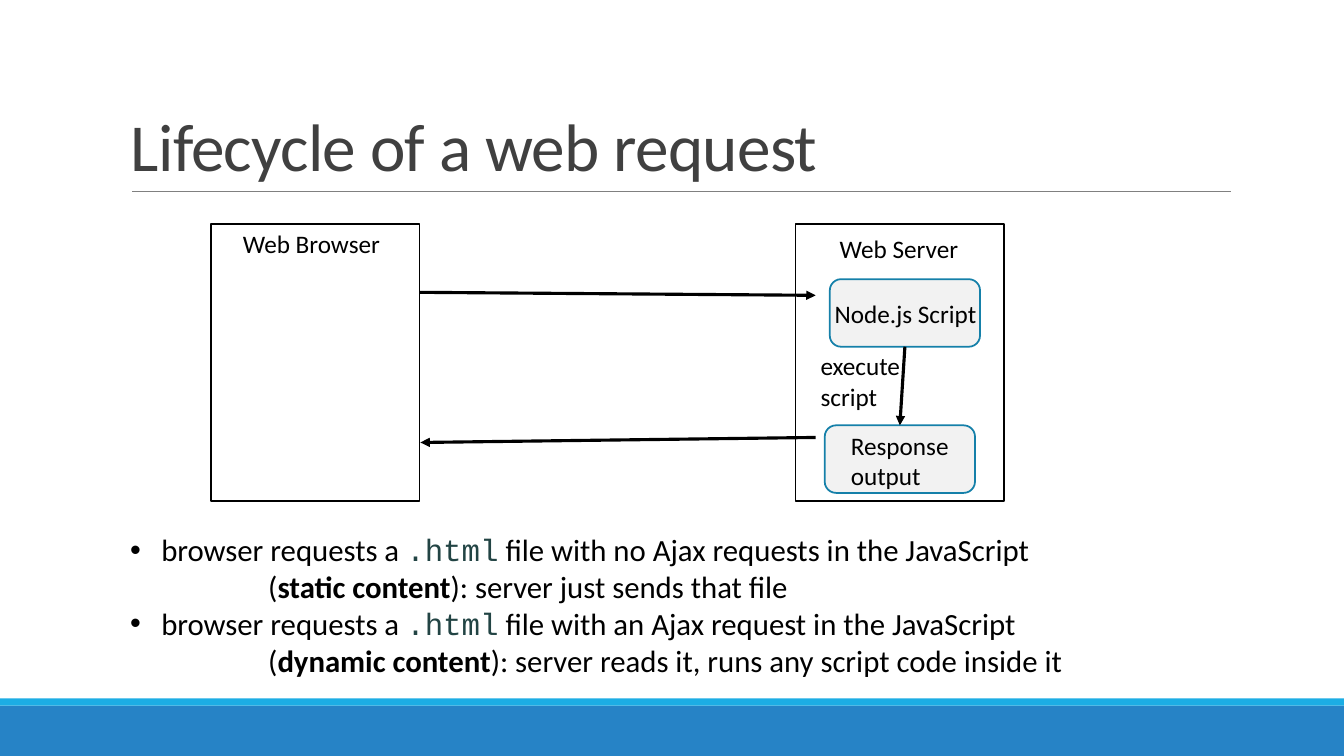
from pptx import Presentation
from pptx.dml.color import RGBColor
from pptx.enum.shapes import MSO_CONNECTOR as Link, MSO_SHAPE as Kind
from pptx.enum.text import MSO_ANCHOR as Anchor
from pptx.oxml.ns import qn
from pptx.util import Inches, Pt
from lxml.etree import SubElement as Sub

# Content
TITLE = "Lifecycle of a web request"
POINTS = [
    ("file with no Ajax requests in the JavaScript",
     "static content", "server just sends that file"),
    ("file with an Ajax request in the JavaScript",
     "dynamic content", "server reads it, runs any script code inside it"),
]
# Text, left, top, width, height
LABELS = [
    ("Web Browser", 2.31, 2.22, 1.69, 0.4),
    ("Web Server", 8.23, 2.27, 1.69, 0.4),
    ("Node.js Script", 8.18, 2.91, 1.62, 0.4),
    ("execute script", 8.04, 3.43, 1.03, 0.71),
    ("Response output", 8.34, 4.22, 1.38, 0.71),
]
HOSTS = [2.09, 7.89]                      # left edges
STEPS = [(8.23, 2.77), (8.18, 4.22)]      # left, top
TRIPS = [(4.16, 2.9, 8.09, 2.93), (8.09, 4.34, 4.17, 4.39)]

WIDE, HIGH = 13.33, 7.5
FONT, CODE = "Calibri", "Courier New"
BLACK, GRAY, TEAL = "000000", "404040", "224444"
EDGE = 1.2                                # left of title and body
HANG, DEEP = 0.31, 1.37                   # text indents in the body

deck = Presentation()
deck.slide_width, deck.slide_height = Inches(WIDE), Inches(HIGH)
slide = deck.slides.add_slide(deck.slide_layouts[6])
shapes = slide.shapes


def color(code):
    return RGBColor.from_string(code)


def style(font, size, code=BLACK, name=FONT):
    font.size, font.name = Pt(size), name
    font.color.rgb = color(code)


def block(kind, x, y, w, h, fill=None, line=None):
    item = shapes.add_shape(kind, *map(Inches, (x, y, w, h)))
    item.shadow.inherit = False
    if fill:
        item.fill.solid()
        item.fill.fore_color.rgb = color(fill)
    else:
        item.fill.background()
    if line:
        item.line.color.rgb = color(line)
        item.line.width = Pt(1.25)
    else:
        item.line.fill.background()
    return item


def link(ends, code=BLACK, width=2.25, arrow=True):
    item = shapes.add_connector(Link.STRAIGHT, *map(Inches, ends))
    item.line.color.rgb = color(code)
    item.line.width = Pt(width)
    if arrow:
        Sub(item.line._get_or_add_ln(), qn("a:tailEnd"), type="triangle")
    Sub(item._element.spPr, qn("a:effectLst"))
    return item


def box(x, y, w, h):
    frame = shapes.add_textbox(*map(Inches, (x, y, w, h))).text_frame
    frame.word_wrap = True
    return frame


def indent(para, left, hang=0, bullet=False):
    props = para._p.get_or_add_pPr()
    props.set("marL", str(Inches(left)))
    props.set("indent", str(-Inches(hang)))
    if bullet:
        Sub(props, qn("a:buFont"), typeface="Arial")
        Sub(props, qn("a:buChar"), char="•")


def write(para, text):
    run = para.add_run()
    run.text = text
    return run


# Footer bands and title rule
block(Kind.RECTANGLE, 0, 7, WIDE, 0.5, "2683C6")
block(Kind.RECTANGLE, 0, 6.93, WIDE, 0.07, "1CADE4")
link((1.31, 1.9, 12.21, 1.9), "808080", 0.5, False)

# Title
frame = box(EDGE, 0.3, 11, 1.59)
frame.vertical_anchor = Anchor.BOTTOM
para = frame.paragraphs[0]
para.line_spacing = 0.85
style(para.font, 48, GRAY)
write(para, TITLE)._r.get_or_add_rPr().set("spc", "-50")

# Body: a bulleted line and an indented line for each point
frame = box(EDGE, 5.26, 11, 1.61)
frame.vertical_anchor = Anchor.MIDDLE
frame.margin_left, frame.margin_right = Inches(0.09), 0
frame.margin_top, frame.margin_bottom = 0, Inches(0.13)
for i, (ask, term, reply) in enumerate(POINTS):
    para = frame.add_paragraph() if i else frame.paragraphs[0]
    indent(para, HANG, HANG, True)
    style(para.font, 22)
    write(para, "browser requests a ")
    style(write(para, ".html").font, 22, TEAL, CODE)
    write(para, " " + ask)

    para = frame.add_paragraph()
    indent(para, DEEP)
    style(para.font, 22)
    write(para, "(")
    write(para, term).font.bold = True
    write(para, "): " + reply)

# Diagram
for x in HOSTS:
    block(Kind.RECTANGLE, x, 2.22, 2.07, 2.75, line=BLACK)
for ends in TRIPS:
    link(ends)
script, output = [block(Kind.ROUNDED_RECTANGLE, x, y, 1.49, 0.67,
                        "F2F2F2", "1580A9") for x, y in STEPS]
run = link((8.97, 3.44, 8.93, 4.22))
run.begin_connect(script, 2)
run.end_connect(output, 0)
for text, *place in LABELS:
    para = box(*place).paragraphs[0]
    style(para.font, 18)
    write(para, text)

deck.save("out.pptx")
